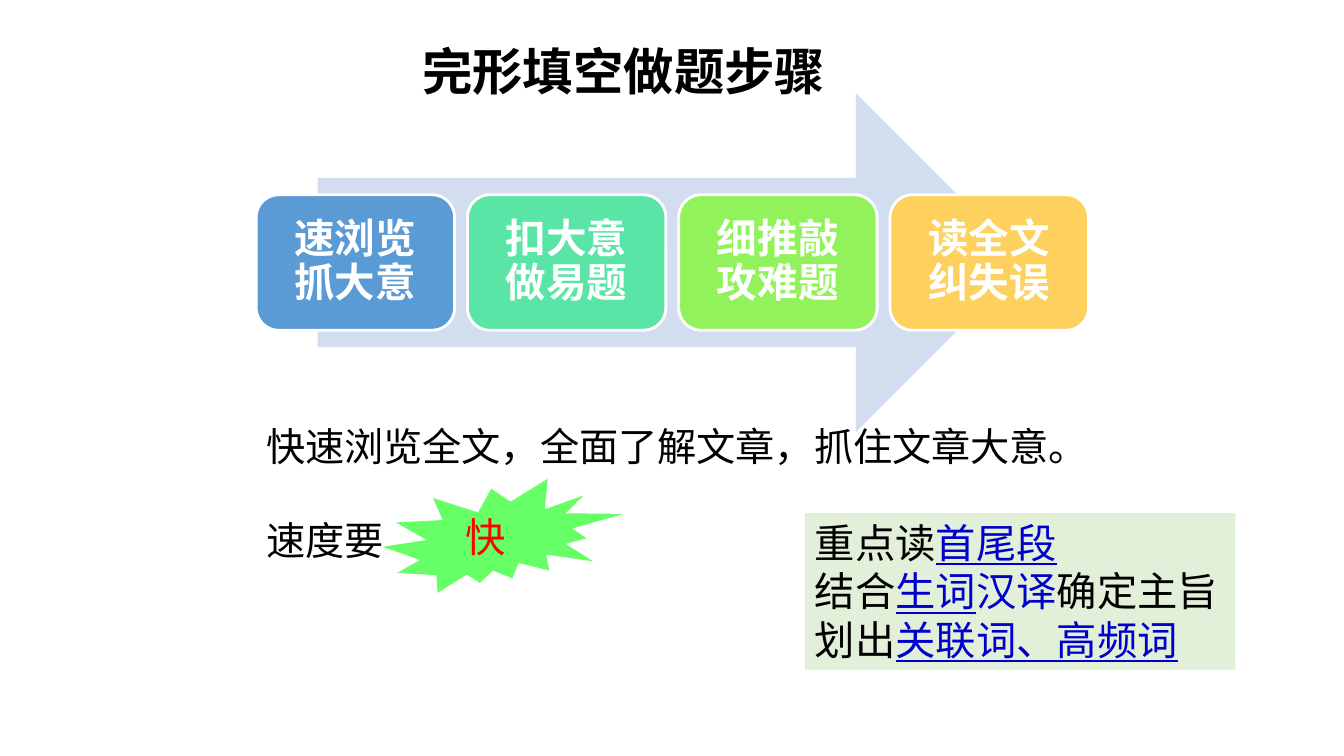
from dataclasses import dataclass

from lxml.etree import SubElement
from pptx import Presentation
from pptx.dml.color import RGBColor
from pptx.enum.shapes import MSO_SHAPE
from pptx.enum.text import MSO_ANCHOR, PP_ALIGN
from pptx.oxml.ns import qn
from pptx.util import Pt


@dataclass(frozen=True)
class Theme:
    black: str = "000000"
    white: str = "FFFFFF"
    red: str = "FF0000"
    blue: str = "0000CC"
    arrow: str = "D2DEEF"
    burst: str = "66FF66"
    panel: str = "E2F0D9"
    steps: tuple = ("5B9BD5", "5AE5A7", "92F25B", "FED15E")
    head: float = 36
    step: float = 29
    note: float = 28.8
    body: float = 28
    sans: str = "Calibri"
    serif: str = "Times New Roman"
    hanzi: str = "Noto Sans CJK SC"


THEME = Theme()


def style(run, size, color, face=THEME.sans, bold=False, under=False):
    font = run.font
    font.name, font.size, font.bold = face, Pt(size), bold
    font.underline = under
    font.color.rgb = RGBColor.from_string(color)
    SubElement(run._r.get_or_add_rPr(), qn("a:ea"), typeface=THEME.hanzi)


def draw(slide, kind, box, fill, line=None):
    """Add a flat preset shape, with an outline only if a line colour is given."""
    shape = slide.shapes.add_shape(kind, *map(Pt, box))
    shape.shadow.inherit = False
    shape.fill.solid()
    shape.fill.fore_color.rgb = RGBColor.from_string(fill)
    if line:
        shape.line.color.rgb = RGBColor.from_string(line)
        shape.line.width = Pt(2)
    else:
        shape.line.fill.background()
    return shape


def write(slide, box, text, size, color, face=THEME.sans, bold=False,
          align=PP_ALIGN.LEFT):
    """Add a wrapped text box and return its frame."""
    frame = slide.shapes.add_textbox(*map(Pt, box)).text_frame
    frame.word_wrap = True
    frame.text = text
    for para in frame.paragraphs:
        para.alignment = align
        for run in para.runs:
            style(run, size, color, face, bold)
    return frame


def add_title(slide, box):
    write(slide, box, "完形填空做题步骤", THEME.head, THEME.black,
          bold=True, align=PP_ALIGN.CENTER)


def add_body(slide, box):
    frame = write(slide, box, "快速浏览全文，全面了解文章，抓住文章大意。\n速度要",
                  THEME.body, THEME.black, THEME.serif)
    frame.paragraphs[1].space_before = Pt(33.5)


def add_burst(slide, box):
    left, top, width, height = box
    draw(slide, MSO_SHAPE.EXPLOSION2, box, THEME.burst)
    write(slide, (left + 0.3 * width, top + 0.25 * height, 70.5, 42.5),
          "快", THEME.note, THEME.red)


def add_panel(slide, box):
    """Draw the green note; each part is text, is blue, is underlined."""
    lines = (
        (("重点读", False, False), ("首尾段", True, True)),
        (("结合", False, False), ("生词", True, True),
         ("汉译", True, False), ("确定主旨", False, False)),
        (("划出", False, False), ("关联词、高频词", True, True)),
    )
    frame = draw(slide, MSO_SHAPE.RECTANGLE, box, THEME.panel).text_frame
    frame.word_wrap = True
    frame.vertical_anchor = MSO_ANCHOR.TOP
    for index, parts in enumerate(lines):
        para = frame.add_paragraph() if index else frame.paragraphs[0]
        para.alignment = PP_ALIGN.LEFT
        for text, blue, under in parts:
            run = para.add_run()
            run.text = text
            style(run, THEME.note, THEME.blue if blue else THEME.black,
                  THEME.hanzi, under=under)


def add_steps(slide, box):
    """Draw the arrow and, over its middle, a row of even cards."""
    left, top, width, height = box
    inset, gap, share = 43.9, 9.2, 0.4
    names = ("速浏览抓大意", "扣大意做易题", "细推敲攻难题", "读全文纠失误")
    draw(slide, MSO_SHAPE.RIGHT_ARROW,
         (left + inset, top, 505.5, height), THEME.arrow)
    wide = (width - gap * (len(names) - 1)) / len(names)
    tall = share * height
    for index, (name, fill) in enumerate(zip(names, THEME.steps)):
        spot = (left + index * (wide + gap), top + (height - tall) / 2, wide, tall)
        frame = draw(slide, MSO_SHAPE.ROUNDED_RECTANGLE, spot, fill,
                     THEME.white).text_frame
        frame.word_wrap = True
        frame.vertical_anchor = MSO_ANCHOR.MIDDLE
        frame.margin_left = frame.margin_right = Pt(10)
        frame.text = name
        para = frame.paragraphs[0]
        para.alignment = PP_ALIGN.CENTER
        para.line_spacing = 0.9
        style(para.runs[0], THEME.step, THEME.white, bold=True)


def main():
    deck = Presentation()
    deck.slide_width, deck.slide_height = Pt(960), Pt(540)
    slide = deck.slides.add_slide(deck.slide_layouts[6])
    add_title(slide, (219, 25, 453, 50.5))
    add_body(slide, (183, 298, 658, 108.5))
    add_burst(slide, (273.5, 342, 172, 81.5))
    add_panel(slide, (575, 366.5, 307.5, 112))
    add_steps(slide, (183, 66.5, 594.5, 242))
    deck.save("out.pptx")


if __name__ == "__main__":
    main()
